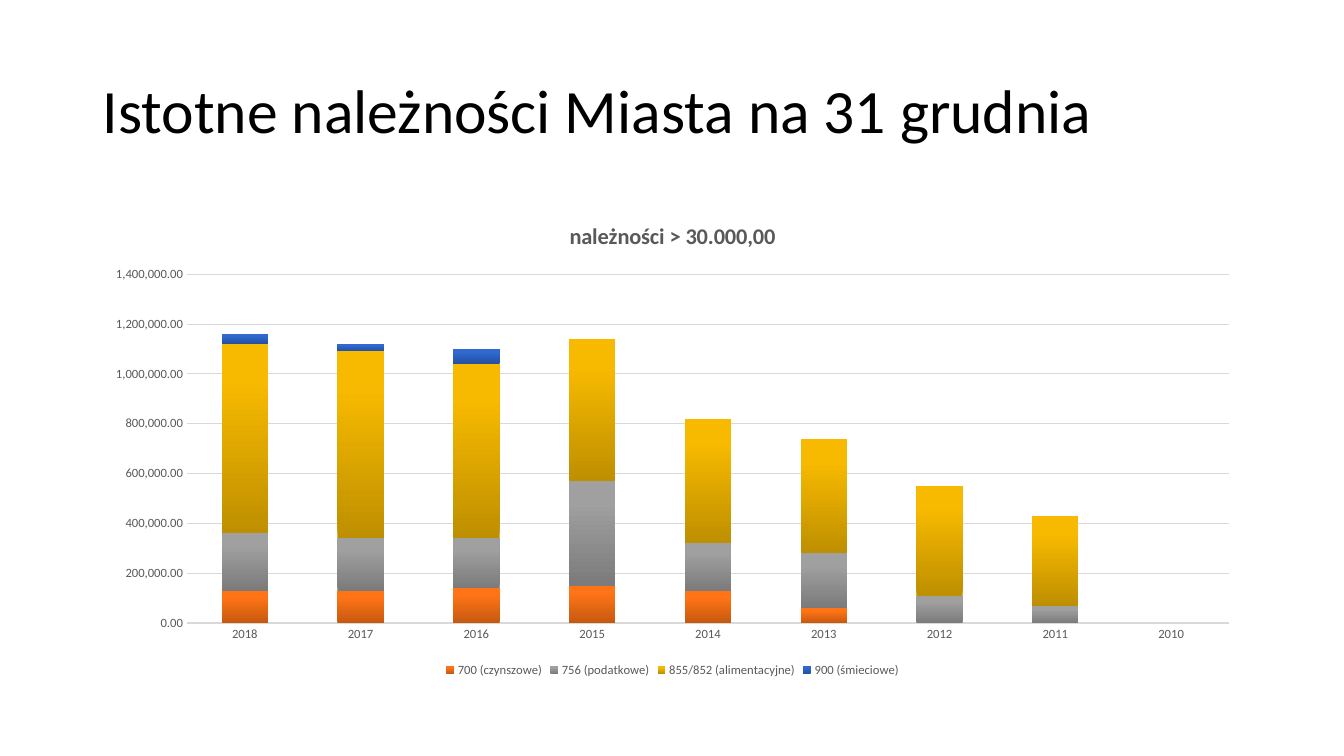
from pptx import Presentation
from pptx.chart.data import CategoryChartData
from pptx.dml.color import RGBColor
from pptx.enum.chart import XL_CHART_TYPE, XL_LEGEND_POSITION, XL_TICK_MARK
from pptx.enum.text import MSO_ANCHOR, PP_ALIGN
from pptx.util import Inches, Pt

STACKED = XL_CHART_TYPE.COLUMN_STACKED
LEGEND_BOTTOM = XL_LEGEND_POSITION.BOTTOM
NO_TICK = XL_TICK_MARK.NONE
MIDDLE = MSO_ANCHOR.MIDDLE
LEFT = PP_ALIGN.LEFT

BLACK = RGBColor(0x00, 0x00, 0x00)
GRAY = RGBColor(0x59, 0x59, 0x59)
GRID = RGBColor(0xD9, 0xD9, 0xD9)
DARK_ORANGE, ORANGE = RGBColor(0xC6, 0x59, 0x10), RGBColor(0xFF, 0x74, 0x16)
DARK_SILVER, SILVER = RGBColor(0x7B, 0x7B, 0x7B), RGBColor(0xA0, 0xA0, 0xA0)
DARK_GOLD, GOLD = RGBColor(0xBE, 0x8F, 0x00), RGBColor(0xF7, 0xBA, 0x00)
DARK_BLUE, BLUE = RGBColor(0x24, 0x51, 0xA1), RGBColor(0x2F, 0x69, 0xD1)

YEARS = [str(year) for year in range(2018, 2009, -1)]
RECEIVABLES = [
    ("700 (czynszowe)", DARK_ORANGE, ORANGE,
     [130000, 130000, 140000, 150000, 130000, 60000]),
    ("756 (podatkowe)", DARK_SILVER, SILVER,
     [230000, 210000, 200000, 420000, 190000, 220000, 110000, 70000]),
    ("855/852 (alimentacyjne)", DARK_GOLD, GOLD,
     [760000, 750000, 700000, 570000, 500000, 460000, 440000, 360000]),
    ("900 (śmieciowe)", DARK_BLUE, BLUE, [40000, 30000, 60000]),
]


class SlideBuilder:
    font_name = "Calibri"
    left, width = Inches(0.92), Inches(11.5)

    def __init__(self, slide):
        self.slide = slide

    def style_font(self, font, size, color, bold=False):
        font.name = self.font_name
        font.size = Pt(size)
        font.bold = bold
        font.color.rgb = color

    def title(self, text, top, height):
        shape = self.slide.shapes.title
        shape.left, shape.top = self.left, top
        shape.width, shape.height = self.width, height
        frame = shape.text_frame
        frame.word_wrap = True
        frame.vertical_anchor = MIDDLE
        paragraph = frame.paragraphs[0]
        paragraph.alignment = LEFT
        paragraph.line_spacing = 0.9
        run = paragraph.add_run()
        run.text = text
        self.style_font(run.font, 44, BLACK)

    def stacked_chart(self, heading, categories, series_rows, top, height):
        data = CategoryChartData(number_format="#,##0.00")
        data.categories = categories
        for name, _, _, values in series_rows:
            data.add_series(name, values + [None] * (len(categories) - len(values)))
        chart = self.slide.shapes.add_chart(
            STACKED, self.left, top, self.width, height, data).chart
        self.style_font(chart.font, 10, BLACK)

        chart.has_title = True
        run = chart.chart_title.text_frame.paragraphs[0].add_run()
        run.text = heading
        self.style_font(run.font, 16, GRAY, bold=True)
        chart.chart_title.include_in_layout = False

        chart.has_legend = True
        chart.legend.position = LEGEND_BOTTOM
        chart.legend.include_in_layout = False
        self.style_font(chart.legend.font, 9, GRAY)

        plot = chart.plots[0]
        plot.gap_width = 150
        plot.overlap = 100
        plot.vary_by_categories = False
        for series, (_, dark, light, _) in zip(plot.series, series_rows):
            self.gradient(series.format.fill, dark, light)
        self.axes(chart)

    def gradient(self, fill, dark, light):
        """Shade upwards from dark, reaching the light colour at 80 %."""
        fill.gradient()
        fill.gradient_angle = 90
        for stop, color, position in zip(fill.gradient_stops, (dark, light), (0, 0.8)):
            stop.color.rgb = color
            stop.position = position

    def axes(self, chart):
        for axis in (chart.category_axis, chart.value_axis):
            axis.major_tick_mark = axis.minor_tick_mark = NO_TICK
            self.style_font(axis.tick_labels.font, 9, GRAY)
        category_line = chart.category_axis.format.line
        category_line.color.rgb = GRID
        category_line.width = Pt(1)

        value_axis = chart.value_axis
        value_axis.format.line.fill.background()
        value_axis.minimum_scale = 0
        value_axis.maximum_scale = 1400000
        value_axis.major_unit = 200000
        value_axis.tick_labels.number_format = "#,##0.00"
        value_axis.tick_labels.number_format_is_linked = False
        value_axis.has_major_gridlines = True
        grid_line = value_axis.major_gridlines.format.line
        grid_line.color.rgb = GRID
        grid_line.width = Pt(0.75)


def main():
    presentation = Presentation()
    presentation.slide_width = Inches(13.33)
    presentation.slide_height = Inches(7.5)
    title_only = presentation.slide_layouts[5]
    builder = SlideBuilder(presentation.slides.add_slide(title_only))
    builder.title("Istotne należności Miasta na 31 grudnia", Inches(0.4), Inches(1.45))
    builder.stacked_chart("należności > 30.000,00", YEARS, RECEIVABLES,
                          Inches(2), Inches(4.76))
    presentation.save("out.pptx")


if __name__ == "__main__":
    main()
